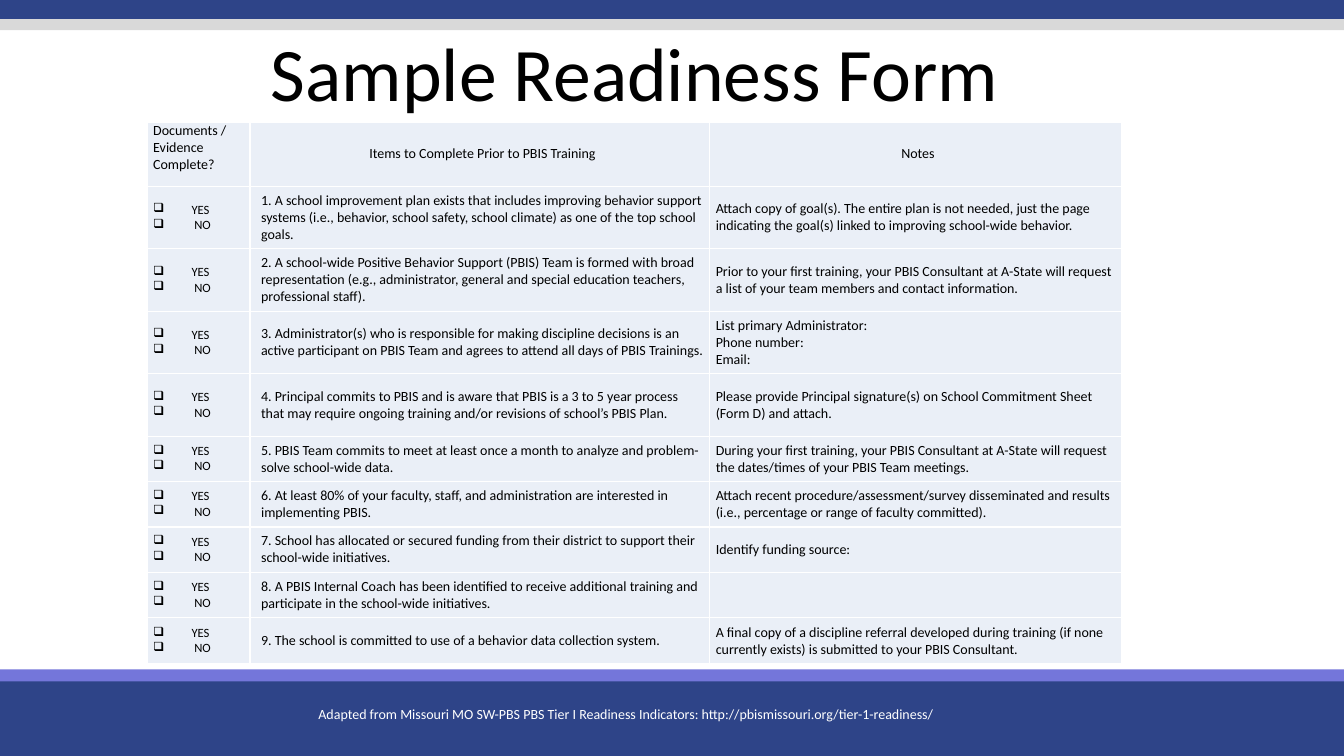
"""Builds the Sample Readiness Form slide: title, checklist table and footer bands."""
from pptx import Presentation
from pptx.dml.color import RGBColor as RGB
from pptx.enum.shapes import MSO_SHAPE as SHAPE
from pptx.enum.text import MSO_ANCHOR as ANCHOR, MSO_AUTO_SIZE as AUTO, PP_ALIGN as ALIGN
from pptx.oxml import parse_xml
from pptx.oxml.ns import nsdecls
from pptx.util import Inches, Pt

COLORS = {"navy": "2E4488", "violet": "7476DA", "gray": "D9D9D9",
          "cell": "EAEFF7", "white": "FFFFFF", "black": "000000"}
FONT = "Calibri"
COLS, ROWS = 1333, 750
UNIT = Inches(7.5) // ROWS


def grid(*cells):
    """Turn grid cells into lengths."""
    return [c * UNIT for c in cells]


def style(p, size, color="black", align=ALIGN.LEFT):
    """Format a paragraph and its runs."""
    p.alignment = align
    for r in p.runs:
        r.font.name, r.font.size = FONT, Pt(size)
        r.font.color.rgb = RGB.from_string(COLORS[color])


prs = Presentation()
prs.slide_width, prs.slide_height = grid(COLS, ROWS)
s = prs.slides.add_slide(prs.slide_layouts[5])

bands = [(670, 80, "navy"), (664, 12, "violet"), (-3, 22, "navy"), (19, 11, "gray")]
for top, height, color in bands:
    sp = s.shapes.add_shape(SHAPE.RECTANGLE, *grid(0, top, COLS, height))
    sp.shadow.inherit = False
    sp.fill.solid()
    sp.fill.fore_color.rgb = RGB.from_string(COLORS[color])
    sp.line.fill.background()

title = s.shapes.title
title.left, title.top, title.width, title.height = grid(155, 35, 949, 87)
tf = title.text_frame
tf.text = "Sample Readiness Form"
tf.auto_size, tf.word_wrap, tf.vertical_anchor = AUTO.NONE, True, ANCHOR.BOTTOM
tf.paragraphs[0].line_spacing = 0.9
style(tf.paragraphs[0], 54, align=ALIGN.CENTER)

header = ("Documents / Evidence Complete?", "Items to Complete Prior to PBIS Training", "Notes")
items = [
    ("A school improvement plan exists that includes improving behavior support systems (i.e., behavior, "
     "school safety, school climate) as one of the top school goals.",
     "Attach copy of goal(s). The entire plan is not needed, just the page indicating the goal(s) linked "
     "to improving school-wide behavior."),
    ("A school-wide Positive Behavior Support (PBIS) Team is formed with broad representation (e.g., "
     "administrator, general and special education teachers, professional staff).",
     "Prior to your first training, your PBIS Consultant at A-State will request a list of your team "
     "members and contact information."),
    ("Administrator(s) who is responsible for making discipline decisions is an active participant on "
     "PBIS Team and agrees to attend all days of PBIS Trainings.",
     "List primary Administrator:\nPhone number:\nEmail:"),
    ("Principal commits to PBIS and is aware that PBIS is a 3 to 5 year process that may require ongoing "
     "training and/or revisions of school’s PBIS Plan.",
     "Please provide Principal signature(s) on School Commitment Sheet (Form D) and attach."),
    ("PBIS Team commits to meet at least once a month to analyze and problem-solve school-wide data.",
     "During your first training, your PBIS Consultant at A-State will request the dates/times of your "
     "PBIS Team meetings."),
    ("At least 80% of your faculty, staff, and administration are interested in implementing PBIS.",
     "Attach recent procedure/assessment/survey disseminated and results (i.e., percentage or range of "
     "faculty committed)."),
    ("School has allocated or secured funding from their district to support their school-wide initiatives.",
     "Identify funding source:"),
    ("A PBIS Internal Coach has been identified to receive additional training and participate in the "
     "school-wide initiatives.", ""),
    ("The school is committed to use of a behavior data collection system.",
     "A final copy of a discipline referral developed during training (if none currently exists) is "
     "submitted to your PBIS Consultant."),
]
rows = [header] + [("YES\n NO", f"{n}. {item}", note) for n, (item, note) in enumerate(items, 1)]
col_widths = grid(102, 456, 408)
row_heights = grid(64, *[62] * 4, *[45] * 4, 46)

table = s.shapes.add_table(len(rows), len(header), *grid(146, 121, 967, 537)).table
table.first_row = table.horz_banding = False
for column, width in zip(table.columns, col_widths):
    column.width = width
for row, height in zip(table.rows, row_heights):
    row.height = height

for i, texts in enumerate(rows):
    for j, text in enumerate(texts):
        cell = table.cell(i, j)
        cell.margin_left = cell.margin_right = 6 * UNIT
        cell.margin_top = cell.margin_bottom = 0
        cell.vertical_anchor = ANCHOR.TOP if i == j == 0 else ANCHOR.MIDDLE
        for side in "LRTB":
            cell._tc.get_or_add_tcPr().append(parse_xml(
                f'<a:ln{side} {nsdecls("a")} w="{Pt(1)}"><a:solidFill>'
                f'<a:srgbClr val="{COLORS["white"]}"/></a:solidFill></a:ln{side}>'))
        cell.fill.solid()
        cell.fill.fore_color.rgb = RGB.from_string(COLORS["cell"])
        cell.text_frame.text = text
        checkbox = i > 0 and j == 0
        for p in cell.text_frame.paragraphs:
            pPr = p._p.get_or_add_pPr()
            if checkbox:
                pPr.set("marL", str(38 * UNIT))
                pPr.set("indent", str(-38 * UNIT))
                pPr.append(parse_xml(f'<a:buChar {nsdecls("a")} char="❑"/>'))
            elif j == 1 or (i == 0 and j == 2):
                pPr.set("marL", str(5 * UNIT))
            style(p, 9 if checkbox else 10, align=ALIGN.CENTER if i == 0 and j else ALIGN.LEFT)

tf = s.shapes.add_textbox(*grid(306, 695, 648, 27)).text_frame
tf.word_wrap = True
tf.text = "Adapted from Missouri MO SW-PBS PBS Tier I Readiness Indicators: http://pbismissouri.org/tier-1-readiness/"
style(tf.paragraphs[0], 10, "white")

prs.save("out.pptx")
